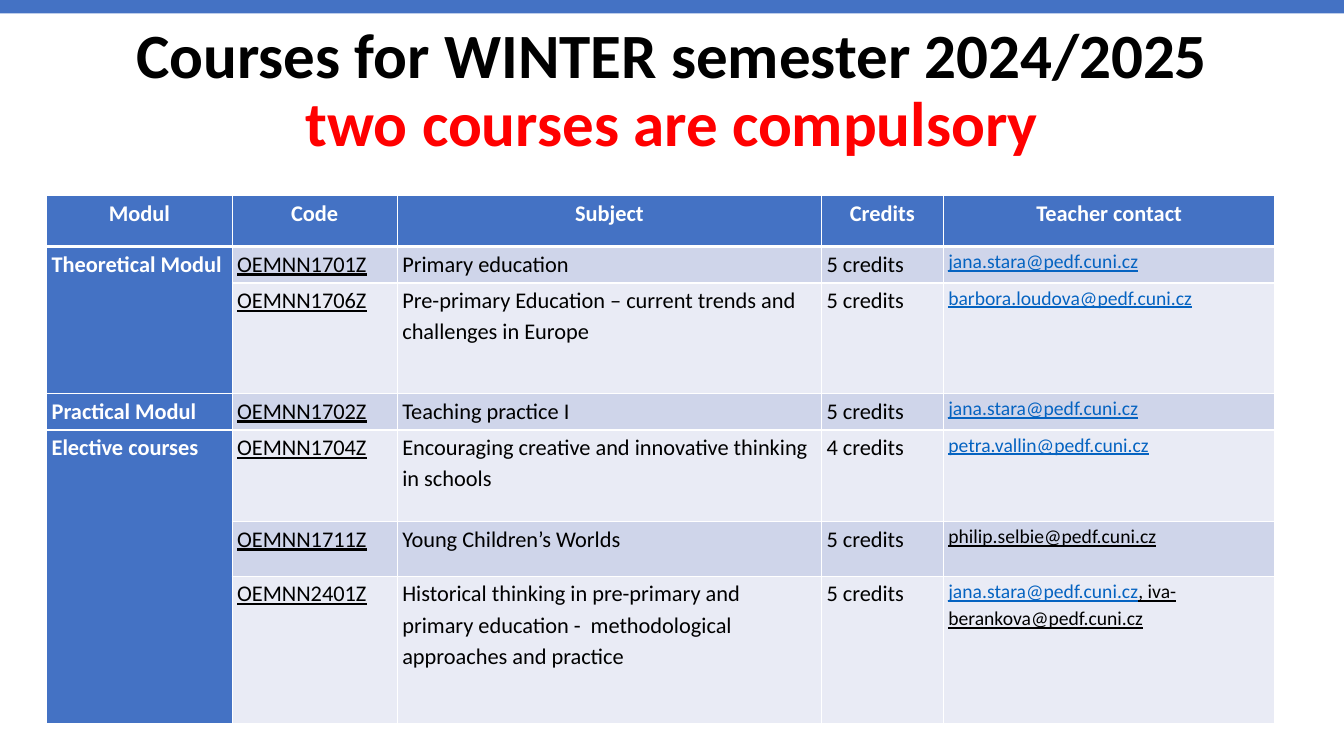
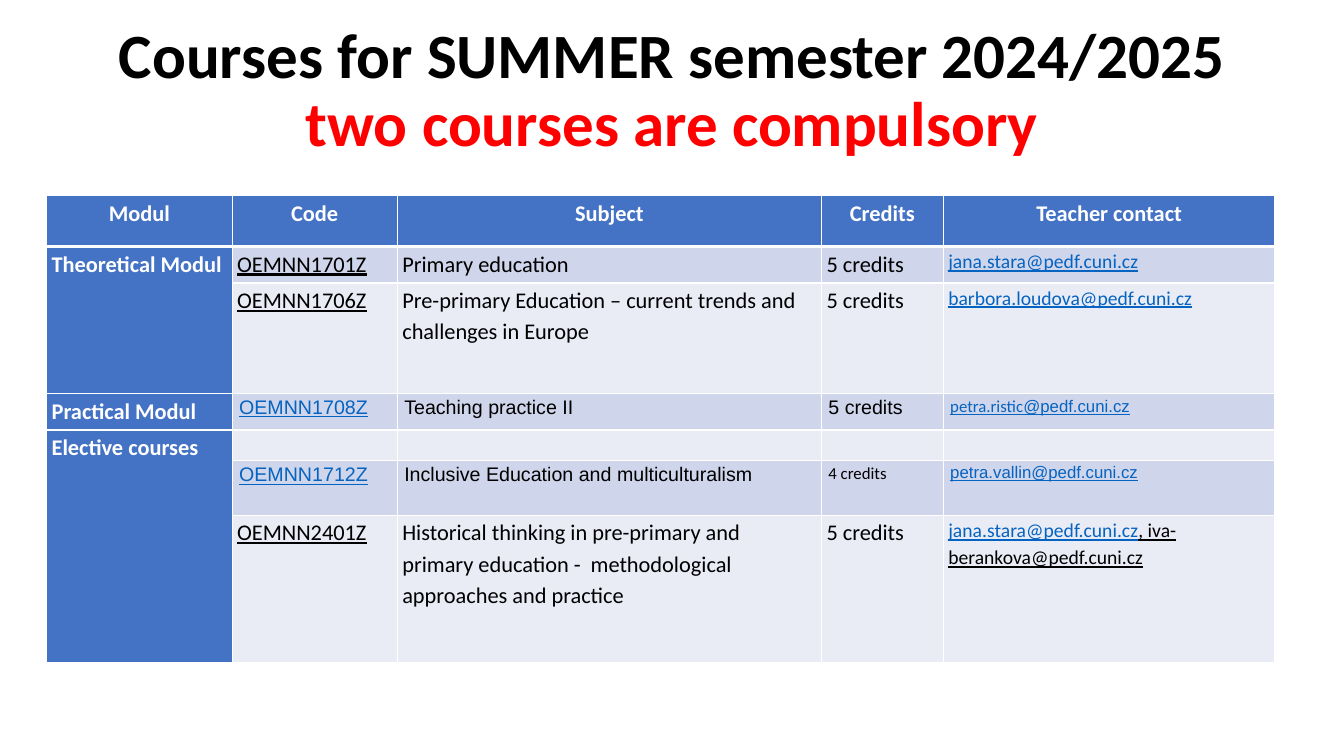
from lxml import etree
from pptx import Presentation
from pptx.dml.color import RGBColor
from pptx.enum import shapes, text
from pptx.oxml.ns import qn
from pptx.util import Pt

HUES = {"blue": "4472C4", "dark": "CFD5EA", "pale": "E9EBF5", "link": "0563C1",
        "red": "FF0000", "black": "000000", "white": "FFFFFF"}


def style(size, hue, bold=False, underline=False, name="Calibri", pad=3.6):
    font = {"size": Pt(size), "name": name, "bold": bold, "underline": underline}
    return {"font": font, "hue": hue, "pad": pad}


STYLES = {
    "title": style(45, "black", bold=True),
    "alert": style(45, "red", bold=True),
    "name": style(16, "white", bold=True),
    "code": style(16, "black", underline=True),
    "text": style(16, "black"),
    "mail": style(14, "link", underline=True),
    "plain": style(14, "black", underline=True),
    "code2": style(14, "link", underline=True, name="Arial", pad=5),
    "text2": style(14, "black", name="Arial", pad=5),
    "small": style(12, "black", pad=5),
    "mail2": style(12, "link", underline=True, name="Arial", pad=5),
    "mail3": style(12, "link", underline=True, pad=5),
}
ROLES = ["name", "code", "text", "text", "mail"]
COLS = [132.5, 118, 303, 87, 237]
LEFT, TOP = 33.3, 139.7

HEAD = ["Modul", "Code", "Subject", "Credits", "Teacher contact"]
THEORY = [
    (26, ["Theoretical Modul", "OEMNN1701Z", "Primary education", "5 credits",
          "jana.stara@pedf.cuni.cz"]),
    (79, [None, "OEMNN1706Z",
          "Pre-primary Education – current trends and challenges in Europe",
          "5 credits", "barbora.loudova@pedf.cuni.cz"]),
]
HISTORY = (105, [
    None, "OEMNN2401Z",
    "Historical thinking in pre-primary and primary education -  methodological approaches and practice",
    "5 credits",
    [("mail", "jana.stara@pedf.cuni.cz"), ("plain", ", iva-berankova@pedf.cuni.cz")]])
WINTER = [
    (26, ["Practical Modul", "OEMNN1702Z", "Teaching practice I", "5 credits",
          "jana.stara@pedf.cuni.cz"]),
    (65.5, ["Elective courses", "OEMNN1704Z",
            "Encouraging creative and innovative thinking in schools",
            "4 credits", "petra.vallin@pedf.cuni.cz"]),
    (39, [None, "OEMNN1711Z", "Young Children’s Worlds", "5 credits",
          [("plain", "philip.selbie@pedf.cuni.cz")]]),
]
SUMMER = [
    (26, ["Practical Modul", [("code2", "OEMNN1708Z")],
          [("text2", "Teaching practice II")], [("text2", "5 credits")],
          [("mail3", "petra.ristic"), ("mail2", "@pedf.cuni.cz")]]),
    (22, ["Elective courses", "", "", "", ""]),
    (39, [None, [("code2", "OEMNN1712Z")],
          [("text2", "Inclusive Education and multiculturalism")],
          [("small", "4 credits")], [("mail2", "petra.vallin@pedf.cuni.cz")]]),
]
SLIDES = [("Courses for WINTER semester 2024/2025", WINTER, True),
          ("Courses for SUMMER semester 2024/2025", SUMMER, False)]


def paint(fill, hue):
    fill.solid()
    fill.fore_color.rgb = RGBColor.from_string(HUES[hue])


def write(para, key, words):
    run = para.add_run()
    run.text = words
    for attr, value in STYLES[key]["font"].items():
        setattr(run.font, attr, value)
    run.font.color.rgb = RGBColor.from_string(HUES[STYLES[key]["hue"]])


def add_title(slide, words):
    box = slide.shapes.add_textbox(Pt(66), Pt(10), Pt(828), Pt(108))
    frame = box.text_frame
    frame.word_wrap = True
    frame.vertical_anchor = text.MSO_ANCHOR.BOTTOM
    first, second = frame.paragraphs[0], frame.add_paragraph()
    write(first, "title", words)
    write(second, "alert", "two courses are compulsory")
    for para in (first, second):
        para.alignment = text.PP_ALIGN.CENTER
        para.line_spacing = 0.9


def add_band(slide):
    band = slide.shapes.add_shape(shapes.MSO_SHAPE.RECTANGLE, 0, 0, Pt(960), Pt(9.7))
    band.shadow.inherit = False
    paint(band.fill, "blue")
    band.line.fill.background()


def edge(cell, row):
    props = cell._tc.get_or_add_tcPr()
    widths = {"lnL": 1, "lnR": 1, "lnT": 3 if row == 1 else 1, "lnB": 3 if row == 0 else 1}
    for tag, width in widths.items():
        line = etree.SubElement(props, qn("a:" + tag), w=str(Pt(width)))
        solid = etree.SubElement(line, qn("a:solidFill"))
        etree.SubElement(solid, qn("a:srgbClr"), val=HUES["white"])


def fill_cell(cell, row, col, item):
    edge(cell, row)
    blue = row == 0 or col == 0
    paint(cell.fill, "blue" if blue else "dark" if row % 2 else "pale")
    key = "name" if blue else ROLES[col]
    runs = item if isinstance(item, list) else [(key, item)] if item else []
    pad = STYLES[runs[0][0] if runs else key]["pad"]
    cell.margin_left = cell.margin_right = Pt(pad)
    cell.margin_top = cell.margin_bottom = 0
    if runs:
        para = cell.text_frame.paragraphs[0]
        para.line_spacing = 1.15
        para.alignment = text.PP_ALIGN.CENTER if row == 0 else text.PP_ALIGN.LEFT
        for style_key, words in runs:
            write(para, style_key, words)


def add_grid(slide, rows):
    total = sum(high for high, _ in rows)
    grid = slide.shapes.add_table(len(rows), len(COLS), Pt(LEFT), Pt(TOP),
                                  Pt(sum(COLS)), Pt(total)).table
    grid.horz_banding = False
    for col, wide in enumerate(COLS):
        grid.columns[col].width = Pt(wide)
    start = 0
    for row, (high, items) in enumerate(rows):
        grid.rows[row].height = Pt(high)
        for col, item in enumerate(items):
            fill_cell(grid.cell(row, col), row, col, item)
        if items[0]:
            start = row
        elif row + 1 == len(rows) or rows[row + 1][1][0]:
            grid.cell(start, 0).merge(grid.cell(row, 0))


def main():
    deck = Presentation()
    deck.slide_width, deck.slide_height = Pt(960), Pt(540)
    for words, rows, band in SLIDES:
        slide = deck.slides.add_slide(deck.slide_layouts[6])
        add_title(slide, words)
        if band:
            add_band(slide)
        add_grid(slide, [(36.5, HEAD)] + THEORY + rows + [HISTORY])
    deck.save("out.pptx")


if __name__ == "__main__":
    main()
